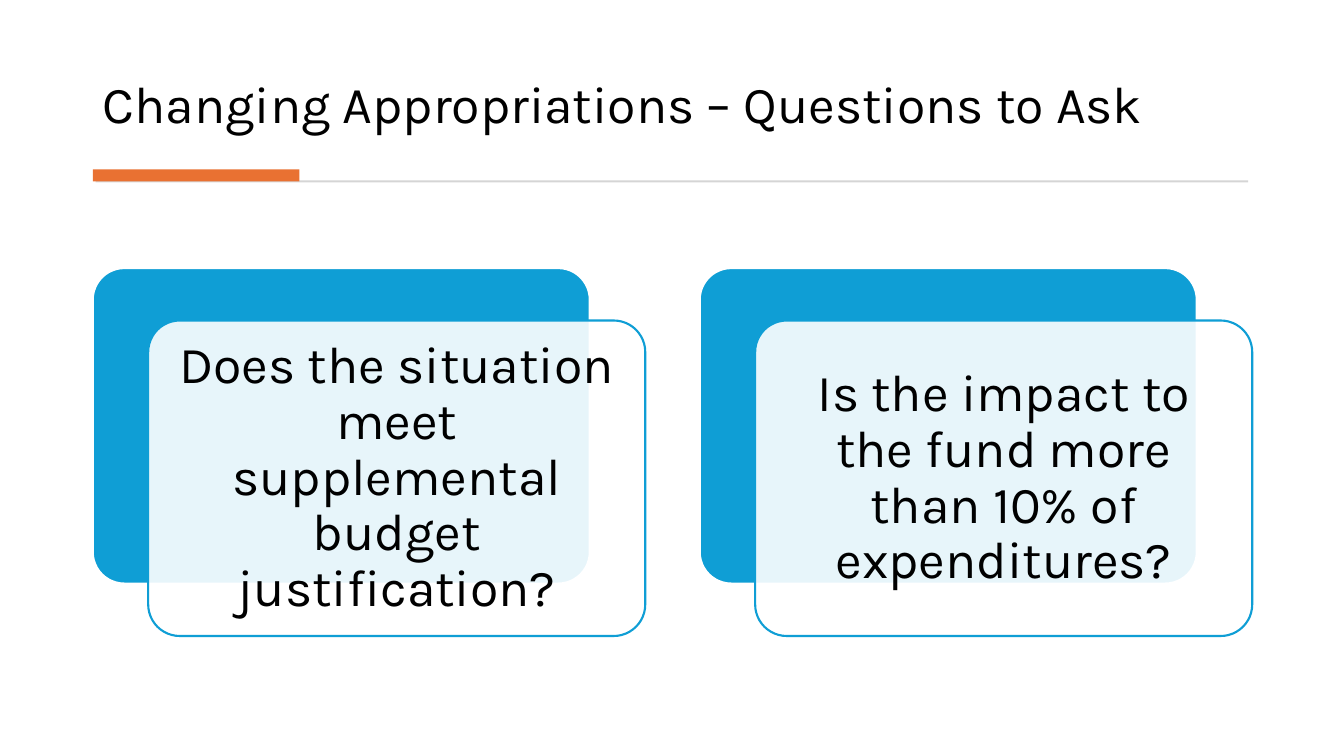
from dataclasses import dataclass

from lxml import etree
from pptx import Presentation
from pptx.dml.color import RGBColor
from pptx.enum.shapes import MSO_SHAPE
from pptx.enum.text import MSO_ANCHOR, MSO_AUTO_SIZE, PP_ALIGN
from pptx.oxml.ns import qn
from pptx.util import Inches, Pt


@dataclass(frozen=True)
class Theme:
    font: str = "Karla"
    text_size: float = 37
    text: str = "000000"
    white: str = "FFFFFF"
    rule: str = "D5D5D5"
    accent: str = "E97132"
    card: str = "0F9ED5"
    card_line: float = 1.5
    front_opacity: int = 90


QUESTIONS = (
    "Does the situation meet supplemental budget justification?",
    "Is the impact to the fund more than 10% of expenditures?",
)


def write_text(shape, text, *, font, size, color, align=PP_ALIGN.LEFT,
               anchor=MSO_ANCHOR.MIDDLE, margins=None):
    """Fill a shape with one formatted paragraph."""
    frame = shape.text_frame
    frame.word_wrap = True
    frame.auto_size = MSO_AUTO_SIZE.NONE
    frame.vertical_anchor = anchor
    if margins is not None:
        frame.margin_left = frame.margin_right = Inches(margins)
        frame.margin_top = frame.margin_bottom = Inches(margins)
    paragraph = frame.paragraphs[0]
    paragraph.alignment = align
    paragraph.line_spacing = 0.9
    paragraph.space_before = Pt(0)
    run = paragraph.add_run()
    run.text = text
    run.font.name = font
    run.font.size = Pt(size)
    run.font.color.rgb = RGBColor.from_string(color)


class SlideBuilder:
    def __init__(self, slide, theme):
        self.slide = slide
        self.theme = theme
        self.text_style = dict(font=theme.font, size=theme.text_size,
                               color=theme.text)

    def title(self, text, left, top, width, height):
        shape = self.slide.shapes.title
        shape.left, shape.top = Inches(left), Inches(top)
        shape.width, shape.height = Inches(width), Inches(height)
        write_text(shape, text, anchor=MSO_ANCHOR.BOTTOM, **self.text_style)

    def block(self, kind, left, top, width, height, fill, line=None):
        shape = self.slide.shapes.add_shape(
            kind, Inches(left), Inches(top), Inches(width), Inches(height))
        shape.shadow.inherit = False
        shape.fill.solid()
        shape.fill.fore_color.rgb = RGBColor.from_string(fill)
        if line:
            shape.line.color.rgb = RGBColor.from_string(line)
            shape.line.width = Pt(self.theme.card_line)
        else:
            shape.line.fill.background()
        return shape

    def bar(self, left, top, width, height, fill):
        return self.block(MSO_SHAPE.RECTANGLE, left, top, width, height, fill)

    def card(self, left, top, fill, line):
        shape = self.block(MSO_SHAPE.ROUNDED_RECTANGLE, left, top, 4.93, 3.13,
                           fill, line)
        shape.adjustments[0] = 0.1
        return shape

    def question(self, text, left, top):
        """A solid card with a translucent text card offset in front."""
        theme = self.theme
        self.card(left, top, theme.card, theme.white)
        front = self.card(left + 0.55, top + 0.52, theme.white, theme.card)
        color = front.fill._xPr.find(qn("a:solidFill"))[0]
        alpha = etree.SubElement(color, qn("a:alpha"))
        alpha.set("val", str(theme.front_opacity * 1000))
        write_text(front, text, align=PP_ALIGN.CENTER, margins=0.15,
                   **self.text_style)


def main():
    presentation = Presentation()
    presentation.slide_width = Inches(13.33)
    presentation.slide_height = Inches(7.5)
    theme = Theme()
    slide = presentation.slides.add_slide(presentation.slide_layouts[5])
    builder = SlideBuilder(slide, theme)

    # Title and divider
    builder.title("Changing Appropriations – Questions to Ask",
                  0.92, 0.28, 11.49, 1.11)
    builder.bar(0.95, 1.79, 11.43, 0.02, theme.rule)
    builder.bar(0.92, 1.68, 2.05, 0.12, theme.accent)

    # Question cards
    for index, text in enumerate(QUESTIONS):
        builder.question(text, 0.92 + index * 6.02, 2.66)

    presentation.save("out.pptx")


if __name__ == "__main__":
    main()
